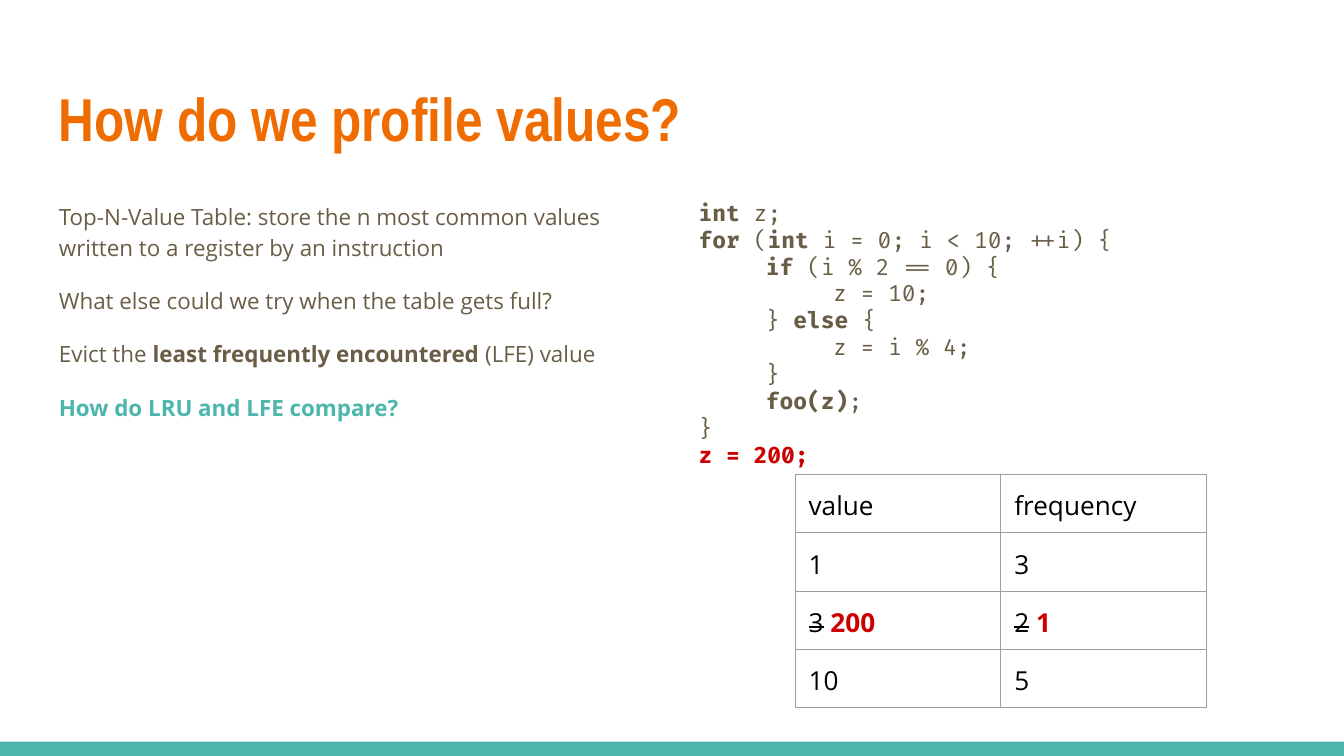
from lxml import etree
from pptx import Presentation
from pptx.dml.color import RGBColor
from pptx.enum.shapes import MSO_SHAPE
from pptx.enum.text import MSO_ANCHOR
from pptx.oxml.ns import qn
from pptx.util import Pt

RECT = MSO_SHAPE.RECTANGLE
TOP, MIDDLE = MSO_ANCHOR.TOP, MSO_ANCHOR.MIDDLE

# Theme: colours, fonts and type sizes
THEME = {
    "teal": "4DB6AC",
    "border": "9E9E9E",
    "border_width": 0.75,
    "inset": 7.2,
    "title": {"name": "Arial Narrow", "size": 32.4, "color": "EF6C00", "bold": True},
    "body": {"name": "Open Sans", "size": 12, "color": "695D46", "bold": False},
    "code": {"name": "Fira Code", "size": 12, "color": "695D46", "bold": False},
    "table": {"name": "Open Sans", "size": 14, "color": "000000", "bold": False},
}
BOLD = {"bold": True}
TEAL = {"bold": True, "color": THEME["teal"]}
RED = {"bold": True, "color": "CC0000"}
STRUCK = {"strike": True}

# Content: a paragraph is a list of runs, a run is text or (text, changes)
TITLE = [["How do we profile values?"]]
NOTES = [
    ["Top-N-Value Table: store the n most common values written to a register by an instruction"],
    ["What else could we try when the table gets full?"],
    ["Evict the ", ("least frequently encountered", BOLD), " (LFE) value"],
    [("How do LRU and LFE compare?", TEAL)],
]
CODE = [
    [("int", BOLD), " z;"],
    [("for", BOLD), " (", ("int", BOLD), " i = 0; i < 10; ++i) {"],
    ["\t", ("if", BOLD), " (i % 2 == 0) {"],
    ["\t\tz = 10;"],
    ["\t} ", ("else", BOLD), " {"],
    ["\t\tz = i % 4;"],
    ["\t}"],
    ["\t", ("foo(z)", BOLD), ";"],
    ["}"],
    [("z = 200;", RED)],
]
TABLE = [
    [["value"], ["frequency"]],
    [["1"], ["3"]],
    [[("3", STRUCK), " ", ("200", RED)], [("2", STRUCK), " ", ("1", RED)]],
    [["10"], ["5"]],
]

# Layout in points
SLIDE_W, SLIDE_H = 720, 405
BAR_H = 7.7
TITLE_BOX = (24.5, 35.4, 671, 55.2)
NOTES_BOX = (24.5, 99.4, 335.5, 260)
CODE_BOX = (367.2, 99.4, 338.4, 273.6)
TABLE_LEFT, TABLE_TOP = 426, 254.2
COL_W, ROW_H = 110.2, 30.5


def write_runs(p, runs, base):
    for run in runs:
        text, changes = run if isinstance(run, tuple) else (run, {})
        style = {**base, **changes}
        r = p.add_run()
        r.text = text
        font = {"name": style["name"], "size": Pt(style["size"]), "bold": style["bold"]}
        for key, value in font.items():
            setattr(r.font, key, value)
        r.font.color.rgb = RGBColor.from_string(style["color"])
        if style.get("strike"):
            r._r.get_or_add_rPr().set("strike", "sngStrike")


def add_text(s, box, paragraphs, base, anchor=TOP, spacing=1.0, gap=0):
    tf = s.shapes.add_textbox(*map(Pt, box)).text_frame
    inset = Pt(THEME["inset"])
    frame = {"word_wrap": True, "vertical_anchor": anchor, "margin_left": inset,
             "margin_right": inset, "margin_top": inset, "margin_bottom": inset}
    for key, value in frame.items():
        setattr(tf, key, value)
    for i, runs in enumerate(paragraphs):
        p = tf.add_paragraph() if i else tf.paragraphs[0]
        p.line_spacing = spacing
        p.space_before = Pt(gap if i else 0)
        write_runs(p, runs, base)


def add_borders(cell):
    tcPr = cell._tc.get_or_add_tcPr()
    for i, side in enumerate(("lnL", "lnR", "lnT", "lnB")):
        ln = etree.Element(qn(f"a:{side}"), w=str(Pt(THEME["border_width"])))
        fill = etree.SubElement(ln, qn("a:solidFill"))
        etree.SubElement(fill, qn("a:srgbClr"), val=THEME["border"])
        tcPr.insert(i, ln)


def add_value_table(s):
    n_rows, n_cols = len(TABLE), len(TABLE[0])
    table = s.shapes.add_table(n_rows, n_cols, Pt(TABLE_LEFT), Pt(TABLE_TOP),
                               Pt(COL_W * n_cols), Pt(ROW_H * n_rows)).table
    table.first_row = table.horz_banding = False
    inset = Pt(THEME["inset"])
    for row, contents in zip(table.rows, TABLE):
        for cell, runs in zip(row.cells, contents):
            for side in ("left", "right", "top", "bottom"):
                setattr(cell, f"margin_{side}", inset)
            cell.fill.background()
            add_borders(cell)
            write_runs(cell.text_frame.paragraphs[0], runs, THEME["table"])


def main():
    prs = Presentation()
    prs.slide_width, prs.slide_height = Pt(SLIDE_W), Pt(SLIDE_H)
    s = prs.slides.add_slide(prs.slide_layouts[6])

    # Bottom bar
    bar = s.shapes.add_shape(RECT, 0, Pt(SLIDE_H - BAR_H), Pt(SLIDE_W), Pt(BAR_H))
    bar.shadow.inherit = False
    bar.fill.solid()
    bar.fill.fore_color.rgb = RGBColor.from_string(THEME["teal"])
    bar.line.fill.background()

    # Title, notes and code
    add_text(s, TITLE_BOX, TITLE, THEME["title"], anchor=MIDDLE)
    add_text(s, NOTES_BOX, NOTES, THEME["body"], spacing=1.15, gap=12)
    add_text(s, CODE_BOX, CODE, THEME["code"])

    # Value and frequency table
    add_value_table(s)
    prs.save("out.pptx")


if __name__ == "__main__":
    main()
